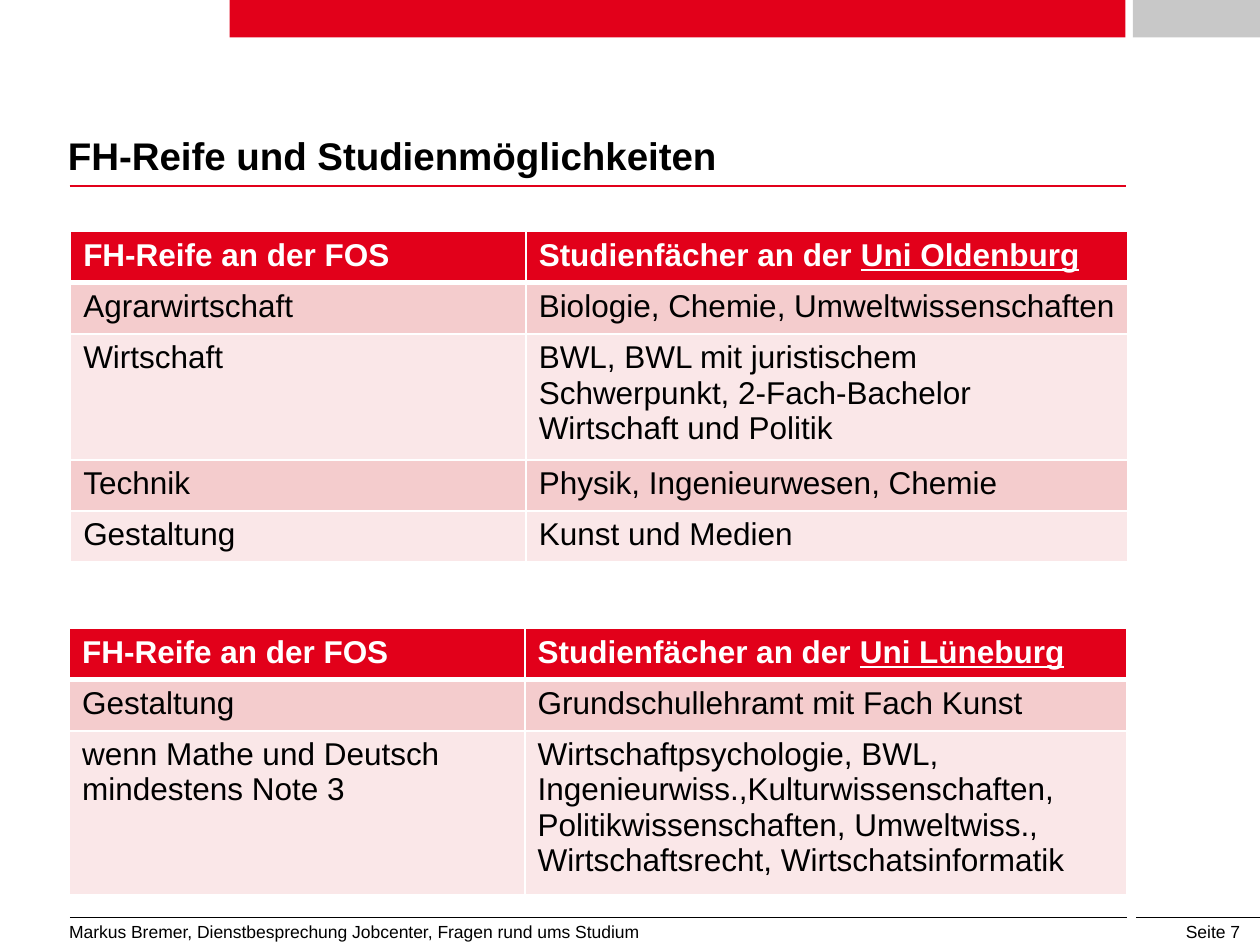
from dataclasses import dataclass

from lxml.etree import SubElement
from pptx import Presentation
from pptx.dml.color import RGBColor
from pptx.enum.shapes import MSO_CONNECTOR as Connector, MSO_SHAPE as Preset
from pptx.enum.text import MSO_ANCHOR as Anchor, PP_ALIGN as Align
from pptx.oxml.ns import qn
from pptx.util import Pt

COLORS = {
    "red": "E2001A",
    "grey": "C8C8C8",
    "black": "000000",
    "white": "FFFFFF",
    "band_dark": "F4CCCD",
    "band_light": "FAE7E8",
}
FONT = "Arial"
COLUMN_WIDTHS = (260.3, 343.7)
ROW_HEIGHT = 29.2
INSET_X, INSET_Y = 7.2, 3.6


@dataclass
class Bar:
    left: float
    width: float
    color: str


@dataclass
class Rule:
    left: float
    right: float
    y: float
    color: str
    weight: float


@dataclass
class Label:
    text: str
    left: float
    top: float
    width: float
    height: float
    size: float = 10
    bold: bool = False
    align: Align = Align.LEFT
    anchor: Anchor = Anchor.TOP
    inset_x: float = INSET_X
    inset_y: float = INSET_Y
    line_spacing: float = 1.0


@dataclass
class SubjectTable:
    left: float
    top: float
    university: str
    rows: list[tuple[str, str]]
    tall_row: int
    tall_height: float


BARS = [Bar(131.2, 512, "red"), Bar(647.4, 72.6, "grey")]
RULES = [
    Rule(39.8, 643.5, 106.4, "red", 1.5),
    Rule(40, 643.8, 524.2, "black", 0.5),
    Rule(649.2, 720, 524.4, "black", 0.5),
]
LABELS = [
    Label("FH-Reife und Studienmöglichkeiten", 38.8, 78.4, 605.5, 24, size=22,
          bold=True, anchor=Anchor.BOTTOM, inset_x=0, inset_y=0, line_spacing=0.9),
    Label("Markus Bremer, Dienstbesprechung Jobcenter, Fragen rund ums Studium",
          32.4, 522.7, 517.7, 28),
    Label("Seite 7", 612.7, 522.7, 103, 13, align=Align.RIGHT),
]
TABLES = [
    SubjectTable(40.4, 132.4, "Uni Oldenburg", [
        ("Agrarwirtschaft", "Biologie, Chemie, Umweltwissenschaften"),
        ("Wirtschaft", "BWL, BWL mit juristischem Schwerpunkt, 2-Fach-Bachelor "
                       "Wirtschaft und Politik"),
        ("Technik", "Physik, Ingenieurwesen, Chemie"),
        ("Gestaltung", "Kunst und Medien"),
    ], tall_row=2, tall_height=72),
    SubjectTable(39.8, 359.2, "Uni Lüneburg", [
        ("Gestaltung", "Grundschullehramt mit Fach Kunst"),
        ("wenn Mathe und Deutsch\nmindestens Note 3",
         "Wirtschaftpsychologie, BWL, Ingenieurwiss.,Kulturwissenschaften, "
         "Politikwissenschaften, Umweltwiss., Wirtschaftsrecht, Wirtschatsinformatik"),
    ], tall_row=2, tall_height=87.2),
]


def rgb(name: str) -> RGBColor:
    return RGBColor.from_string(COLORS[name])


def style_font(paragraph, size: float, color: str, bold: bool = False) -> None:
    font = paragraph.font
    font.name, font.size, font.bold = FONT, Pt(size), bold
    font.color.rgb = rgb(color)


def draw_bar(slide, bar: Bar) -> None:
    shape = slide.shapes.add_shape(Preset.RECTANGLE, Pt(bar.left), 0, Pt(bar.width), Pt(21.4))
    shape.shadow.inherit = False
    shape.fill.solid()
    shape.fill.fore_color.rgb = rgb(bar.color)
    shape.line.fill.background()


def draw_rule(slide, rule: Rule) -> None:
    line = slide.shapes.add_connector(
        Connector.STRAIGHT, Pt(rule.left), Pt(rule.y), Pt(rule.right), Pt(rule.y))
    line.line.color.rgb = rgb(rule.color)
    line.line.width = Pt(rule.weight)
    SubElement(line._element.spPr, qn("a:effectLst"))


def draw_label(slide, label: Label) -> None:
    shape = slide.shapes.add_textbox(
        Pt(label.left), Pt(label.top), Pt(label.width), Pt(label.height))
    frame = shape.text_frame
    frame.word_wrap = True
    frame.vertical_anchor = label.anchor
    frame.margin_left = frame.margin_right = Pt(label.inset_x)
    frame.margin_top = frame.margin_bottom = Pt(label.inset_y)
    paragraph = frame.paragraphs[0]
    paragraph.text = label.text
    paragraph.alignment = label.align
    paragraph.line_spacing = label.line_spacing
    style_font(paragraph, label.size, "black", label.bold)


def set_borders(cell, weights: dict[str, float]) -> None:
    properties = cell._tc.get_or_add_tcPr()
    for position, (side, weight) in enumerate(weights.items()):
        border = SubElement(properties, qn(f"a:{side}"), w=str(Pt(weight)))
        fill = SubElement(border, qn("a:solidFill"))
        SubElement(fill, qn("a:srgbClr"), val=COLORS["white"])
        properties.insert(position, border)  # borders come before the fill


def draw_table(slide, data: SubjectTable) -> None:
    rows = [("FH-Reife an der FOS", "Studienfächer an der "), *data.rows]
    heights = [ROW_HEIGHT] * len(rows)
    heights[data.tall_row] = data.tall_height
    table = slide.shapes.add_table(
        len(rows), len(COLUMN_WIDTHS), Pt(data.left), Pt(data.top),
        Pt(sum(COLUMN_WIDTHS)), Pt(sum(heights))).table
    for column, width in zip(table.columns, COLUMN_WIDTHS):
        column.width = Pt(width)

    for row_index, (texts, height) in enumerate(zip(rows, heights)):
        table.rows[row_index].height = Pt(height)
        header = row_index == 0
        band = "red" if header else "band_dark" if row_index % 2 else "band_light"
        for column_index, text in enumerate(texts):
            cell = table.cell(row_index, column_index)
            cell.margin_left = cell.margin_right = Pt(INSET_X)
            cell.margin_top = cell.margin_bottom = Pt(INSET_Y)
            cell.fill.solid()
            cell.fill.fore_color.rgb = rgb(band)
            set_borders(cell, {"lnL": 1, "lnR": 1, "lnT": 3 if row_index == 1 else 1,
                               "lnB": 3 if header else 1})
            cell.text_frame.text = text
            for paragraph in cell.text_frame.paragraphs:
                style_font(paragraph, 18, "white" if header else "black", header)

    # Underlined university name in the header
    name = table.cell(0, 1).text_frame.paragraphs[0].add_run()
    name.text = data.university
    name.font.underline = True


def main() -> None:
    presentation = Presentation()
    presentation.slide_width, presentation.slide_height = Pt(720), Pt(540)
    slide = presentation.slides.add_slide(presentation.slide_layouts[6])

    # Page frame
    for bar in BARS:
        draw_bar(slide, bar)
    for rule in RULES:
        draw_rule(slide, rule)

    # Title, footer and page number
    for label in LABELS:
        draw_label(slide, label)

    # Subjects by university
    for table in TABLES:
        draw_table(slide, table)

    presentation.save("out.pptx")


if __name__ == "__main__":
    main()
